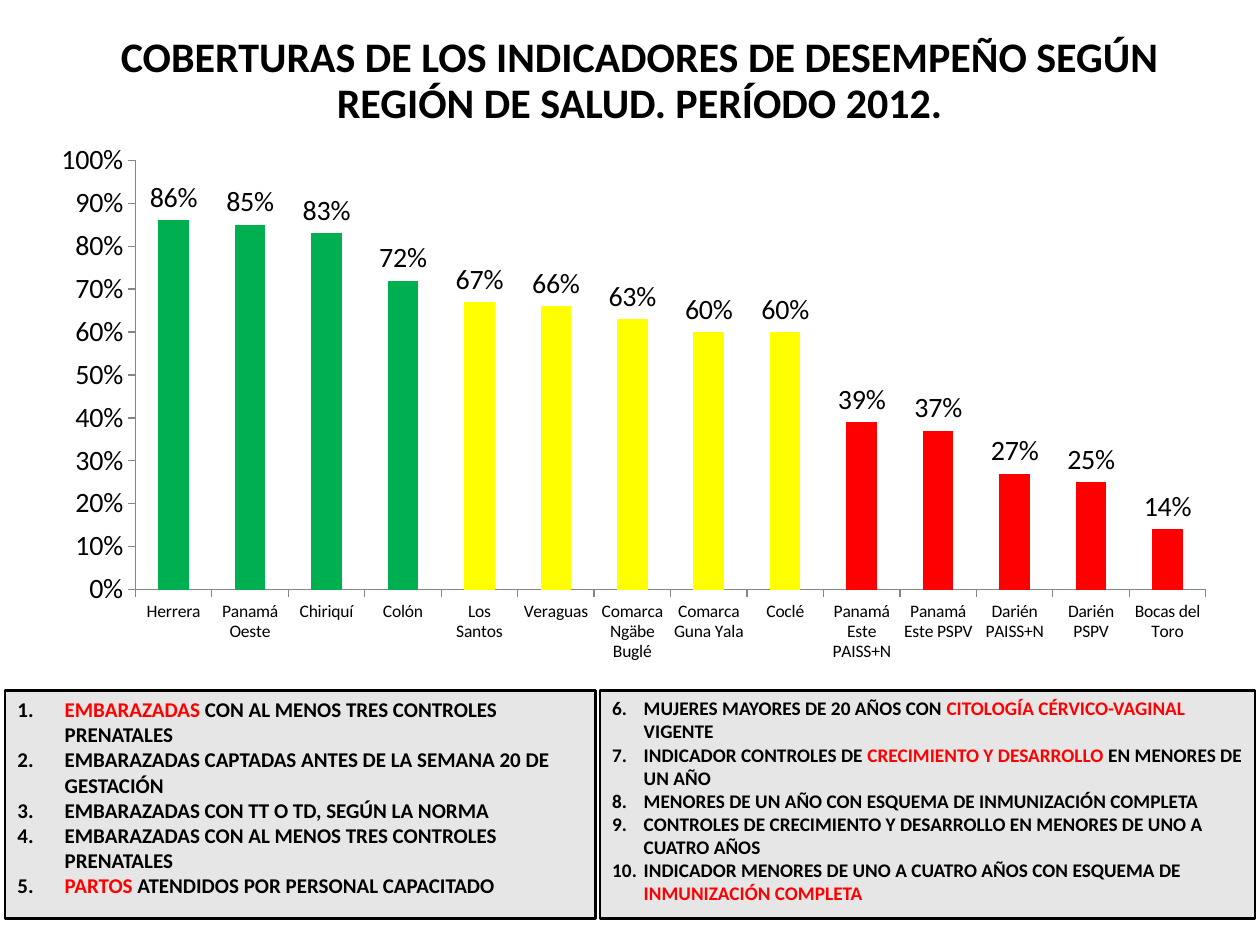
import pptx
import pptx.util
import pptx.dml.color
import pptx.chart.data
import pptx.enum.chart
import pptx.enum.shapes
import pptx.enum.text
import pptx.oxml
import pptx.oxml.ns

Pt = pptx.util.Pt
qn = pptx.oxml.ns.qn
hues = {"black": "000000", "gray": "E6E6E6", "axis": "868686",
        "green": "00B050", "yellow": "FFFF00", "red": "FF0000"}


def tint(name):
    return pptx.dml.color.RGBColor.from_string(hues[name])


def write(frame, lines, size=12, align="LEFT", space=None, start=None, indent=0):
    """Fill a frame with bold lines; parts between asterisks are red."""
    frame.word_wrap = True
    frame.vertical_anchor = pptx.enum.text.MSO_ANCHOR.TOP
    for row, line in enumerate(lines):
        para = frame.add_paragraph() if row else frame.paragraphs[0]
        para.alignment = getattr(pptx.enum.text.PP_ALIGN, align)
        para.line_spacing = space
        if start:
            props = para._p.get_or_add_pPr()
            props.set("marL", str(Pt(indent)))
            props.set("indent", str(-Pt(indent)))
            color = pptx.oxml.ns.nsdecls("a")
            props.append(pptx.oxml.parse_xml(
                f'<a:buClr {color}><a:srgbClr val="{hues["black"]}"/></a:buClr>'))
            mark = props.makeelement(qn("a:buAutoNum"), {"type": "arabicPeriod"})
            mark.set("startAt", str(start))
            props.append(mark)
        for part, text in enumerate(line.split("*")):
            if text:
                run = para.add_run()
                run.text = text
                run.font.name, run.font.size, run.font.bold = "Calibri", Pt(size), True
                run.font.color.rgb = tint("red" if part % 2 else "black")


deck = pptx.Presentation()
deck.slide_width, deck.slide_height = Pt(720), Pt(540)
slide = deck.slides.add_slide(deck.slide_layouts[6])

# Coverage by region
rates = [
    ("Herrera", 0.86), ("Panamá Oeste", 0.85), ("Chiriquí", 0.83), ("Colón", 0.72),
    ("Los Santos", 0.67), ("Veraguas", 0.66), ("Comarca Ngäbe Buglé", 0.63),
    ("Comarca Guna Yala", 0.6), ("Coclé", 0.6), ("Panamá Este PAISS+N", 0.39),
    ("Panamá Este PSPV", 0.37), ("Darién PAISS+N", 0.27), ("Darién PSPV", 0.25),
    ("Bocas del Toro", 0.14)]
data = pptx.chart.data.CategoryChartData(number_format="0%")
data.categories = [name for name, rate in rates]
data.add_series("Series 1", [rate for name, rate in rates])
chart = slide.shapes.add_chart(
    pptx.enum.chart.XL_CHART_TYPE.COLUMN_CLUSTERED,
    Pt(23), Pt(76.3), Pt(679.7), Pt(306.7), data).chart
chart.has_title = chart.has_legend = False
chart.font.name, chart.font.size = "Calibri", Pt(16)
chart.font.color.rgb = tint("black")

# Axes
for axis in (chart.category_axis, chart.value_axis):
    axis.has_major_gridlines = False
    axis.major_tick_mark = pptx.enum.chart.XL_TICK_MARK.OUTSIDE
    axis.format.line.color.rgb = tint("axis")
    axis.format.line.width = Pt(0.75)
chart.category_axis.tick_labels.font.size = Pt(10)
scale = chart.value_axis
scale.minimum_scale, scale.maximum_scale, scale.major_unit = 0, 1, 0.1
scale.tick_labels.number_format = "0%"
scale.tick_labels.number_format_is_linked = False

# Bars coloured by level, with labels
plot = chart.plots[0]
plot.gap_width = 150
plot.vary_by_categories = False
plot.has_data_labels = True
tags = plot.data_labels
tags.show_value = True
tags.number_format, tags.number_format_is_linked = "0%", False
tags.position = pptx.enum.chart.XL_LABEL_POSITION.OUTSIDE_END
for spot, (name, rate) in enumerate(rates):
    level = "green" if rate > 0.7 else "yellow" if rate >= 0.6 else "red"
    fill = plot.series[0].points[spot].format.fill
    fill.solid()
    fill.fore_color.rgb = tint(level)

# Fixed plot area inside the chart
area = chart._chartSpace.chart.plotArea
for old in area.findall(qn("c:layout")):
    area.remove(old)
sides = "".join(f'<c:{key} val="{val}"/>' for key, val in (
    ("layoutTarget", "inner"), ("xMode", "edge"), ("yMode", "edge"),
    ("x", 0.08), ("y", 0.05), ("w", 0.9), ("h", 0.8)))
area.insert(0, pptx.oxml.parse_xml(
    f'<c:layout {pptx.oxml.ns.nsdecls("c")}><c:manualLayout>{sides}'
    '</c:manualLayout></c:layout>'))

# Title
title = slide.shapes.add_textbox(Pt(31), Pt(17.3), Pt(669), Pt(65.5))
write(title.text_frame, ["COBERTURAS DE LOS INDICADORES DE DESEMPEÑO SEGÚN "
                         "REGIÓN DE SALUD. PERÍODO 2012."],
      size=24, align="CENTER", space=0.9)

# Numbered indicators
left = [
    "*EMBARAZADAS* CON AL MENOS TRES CONTROLES PRENATALES",
    "EMBARAZADAS CAPTADAS ANTES DE LA SEMANA 20 DE GESTACIÓN",
    "EMBARAZADAS CON TT O TD, SEGÚN LA NORMA",
    "EMBARAZADAS CON AL MENOS TRES CONTROLES PRENATALES",
    "*PARTOS* ATENDIDOS POR PERSONAL CAPACITADO"]
right = [
    "MUJERES MAYORES DE 20 AÑOS CON *CITOLOGÍA CÉRVICO-VAGINAL *VIGENTE",
    "INDICADOR CONTROLES DE *CRECIMIENTO Y DESARROLLO* EN MENORES DE UN AÑO",
    "MENORES DE UN AÑO CON ESQUEMA DE INMUNIZACIÓN COMPLETA",
    "CONTROLES DE CRECIMIENTO Y DESARROLLO EN MENORES DE UNO A CUATRO AÑOS",
    "INDICADOR MENORES DE UNO A CUATRO AÑOS CON ESQUEMA DE *INMUNIZACIÓN COMPLETA*"]
for x, width, lines, size, start, indent in (
        (2.9, 337.6, left, 12, 1, 27), (342.8, 374.4, right, 11, 6, 18)):
    box = slide.shapes.add_shape(pptx.enum.shapes.MSO_SHAPE.RECTANGLE,
                                 Pt(x), Pt(394.5), Pt(width), Pt(130.5))
    box.shadow.inherit = False
    box.fill.solid()
    box.fill.fore_color.rgb = tint("gray")
    box.line.color.rgb = tint("black")
    box.line.width = Pt(1.5)
    write(box.text_frame, lines, size=size, start=start, indent=indent)

deck.save("out.pptx")
